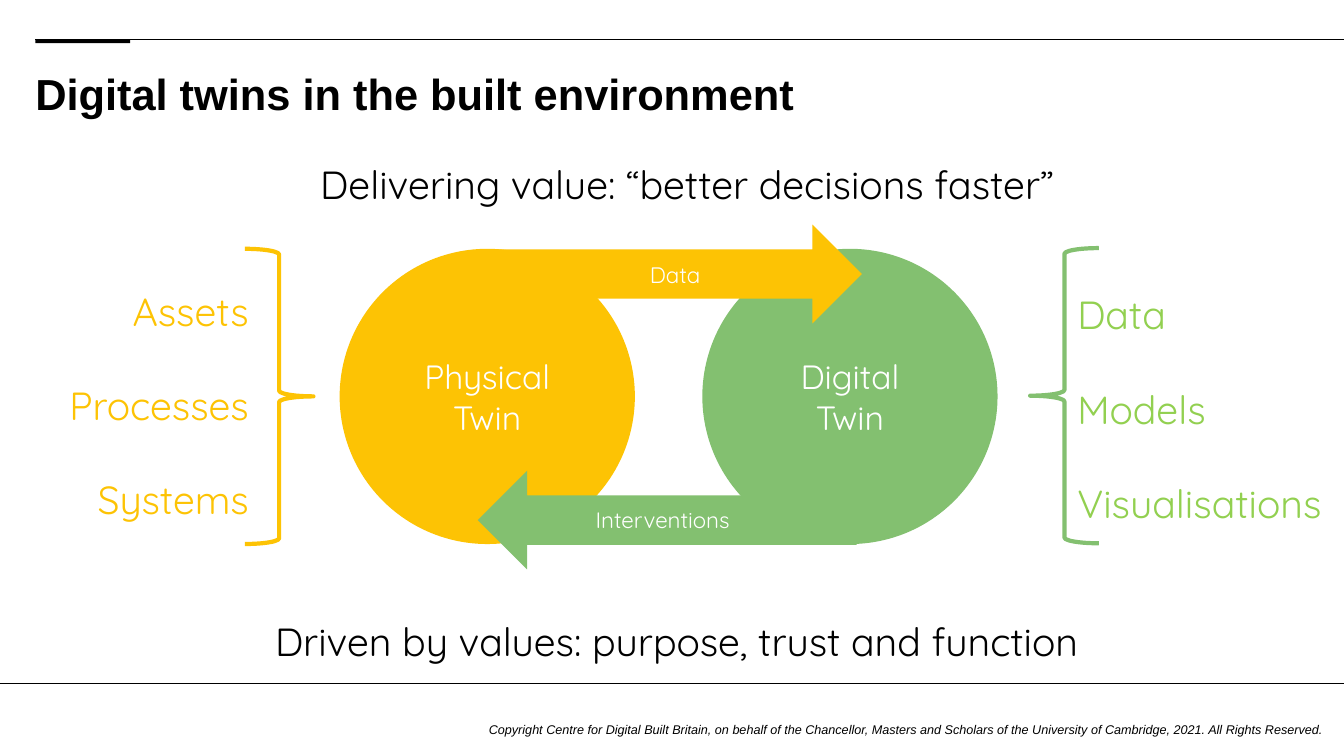
"""Build the slide on digital twins in the built environment."""
from dataclasses import dataclass

from lxml import etree
from pptx import Presentation
from pptx.dml.color import RGBColor
from pptx.enum.shapes import MSO_CONNECTOR, MSO_SHAPE
from pptx.enum.text import MSO_ANCHOR, PP_ALIGN
from pptx.oxml.ns import qn
from pptx.slide import Slide
from pptx.text.text import TextFrame
from pptx.util import Cm, Pt

STRAIGHT = MSO_CONNECTOR.STRAIGHT
RECT, OVAL = MSO_SHAPE.RECTANGLE, MSO_SHAPE.OVAL
ARROW, BRACE = MSO_SHAPE.RIGHT_ARROW, MSO_SHAPE.RIGHT_BRACE
TOP, MIDDLE = MSO_ANCHOR.TOP, MSO_ANCHOR.MIDDLE
LEFT, CENTER, RIGHT = PP_ALIGN.LEFT, PP_ALIGN.CENTER, PP_ALIGN.RIGHT

Box = tuple[float, float, float, float]


@dataclass(frozen=True)
class Theme:
    """Colours, fonts and type sizes."""
    black: str = "000000"
    white: str = "FFFFFF"
    physical: str = "FDC304"
    digital: str = "83C070"
    outputs: str = "92D050"
    heading_font: str = "Arial"
    body_font: str = "Quicksand"
    title: float = 31
    body: float = 28
    twin: float = 24
    flow: float = 16
    footer: float = 9
    rule: float = 0.12
    brace: float = 3


T = Theme()
WIDTH, HEIGHT = 33.87, 19.05
MARGIN = 0.89
TWIN_TOP, TWIN_SIZE = 6.27, 7.44


@dataclass(frozen=True)
class Style:
    """Type settings shared by the paragraphs of a text."""
    size: float
    color: str
    font: str = T.body_font
    align: PP_ALIGN = CENTER
    spacing: float = 1.0
    anchor: MSO_ANCHOR = MIDDLE
    inset: bool = True
    bold: bool = False
    italic: bool = False


@dataclass(frozen=True)
class Rule:
    """A horizontal line."""
    left: float
    top: float


@dataclass(frozen=True)
class Figure:
    """A preset shape, filled or outlined, with optional lines of text."""
    kind: MSO_SHAPE
    box: Box
    color: str
    rotation: float = 0
    outlined: bool = False
    lines: tuple[str, ...] = ()


@dataclass(frozen=True)
class Label:
    """A text box."""
    box: Box
    style: Style
    lines: tuple[str, ...]


TWIN = Style(T.twin, T.white)
FLOW = Style(T.flow, T.white, anchor=TOP)
BANNER = Style(T.body, T.black, spacing=2)
TITLE = Style(T.title, T.black, T.heading_font, LEFT, 0.9, TOP, inset=False, bold=True)
FOOTER = Style(T.footer, T.black, T.heading_font, LEFT, 0.9, TOP, inset=False, italic=True)
INPUTS = Style(T.body, T.physical, align=RIGHT, spacing=2)
OUTPUTS = Style(T.body, T.outputs, align=LEFT, spacing=2)

RULES = (Rule(MARGIN, 0.99), Rule(0, 17.22))

FIGURES = (
    Figure(RECT, (MARGIN, 0.99, 2.39, 0.1), T.black),
    Figure(OVAL, (8.56, TWIN_TOP, TWIN_SIZE, TWIN_SIZE), T.physical, lines=("Physical", "Twin")),
    Figure(OVAL, (17.7, TWIN_TOP, TWIN_SIZE, TWIN_SIZE), T.digital, lines=("Digital", "Twin")),
    Figure(ARROW, (12.17, 5.66, 9.55, 2.49), T.physical),
    Figure(ARROW, (12.04, 11.86, 9.55, 2.49), T.digital, rotation=180),
    Figure(BRACE, (6.17, TWIN_TOP, 1.73, TWIN_SIZE), T.physical, outlined=True),
    Figure(BRACE, (25.96, 6.25, 1.73, TWIN_SIZE), T.digital, rotation=180, outlined=True),
)

LABELS = (
    Label((MARGIN, 1.85, 32.05, 2.77), TITLE, ("Digital twins in the built environment",)),
    Label((6.83, 2.92, 20.96, 2.26), BANNER, ("Delivering value: “better decisions faster”",)),
    Label((15.82, 6.45, 2.39, 0.94), FLOW, ("Data",)),
    Label((14.2, 12.62, 5, 0.94), FLOW, ("Interventions",)),
    Label((1.19, 6.07, 5.33, 7.06), INPUTS, ("Assets", "Processes", "Systems")),
    Label((26.9, 6.17, 6.78, 7.06), OUTPUTS, ("Data", "Models", "Visualisations")),
    Label((5.72, 14.43, 22.66, 2.26), BANNER, ("Driven by values: purpose, trust and function",)),
    Label((12.32, 18.24, 21.54, 0.7), FOOTER, (
        "Copyright Centre for Digital Built Britain, on behalf of the Chancellor, Masters and "
        "Scholars of the University of Cambridge, 2021. All Rights Reserved.",)),
)


def write(tf: TextFrame, lines: tuple[str, ...], style: Style) -> None:
    """Fill a text frame with one paragraph per line."""
    tf.word_wrap = True
    tf.vertical_anchor = style.anchor
    if not style.inset:
        tf.margin_left = tf.margin_top = tf.margin_right = tf.margin_bottom = Cm(0)
    for i, line in enumerate(lines):
        p = tf.add_paragraph() if i else tf.paragraphs[0]
        p.alignment = style.align
        p.line_spacing = style.spacing
        r = p.add_run()
        r.text = line
        r.font.name = style.font
        r.font.size = Pt(style.size)
        r.font.bold = style.bold
        r.font.italic = style.italic
        r.font.color.rgb = RGBColor.from_string(style.color)


def draw_rule(s: Slide, rule: Rule) -> None:
    """Draw a thin line running to the right edge."""
    cx = s.shapes.add_connector(STRAIGHT, Cm(rule.left), Cm(rule.top), Cm(WIDTH), Cm(rule.top))
    cx.line.color.rgb = RGBColor.from_string(T.black)
    cx.line.width = Pt(T.rule)
    etree.SubElement(cx.line._get_or_add_ln().getparent(), qn("a:effectLst"))


def draw_figure(s: Slide, fig: Figure) -> None:
    """Draw a preset shape with its text."""
    sp = s.shapes.add_shape(fig.kind, *map(Cm, fig.box))
    sp.shadow.inherit = False
    sp.rotation = fig.rotation
    color = RGBColor.from_string(fig.color)
    if fig.outlined:
        sp.fill.background()
        sp.line.color.rgb = color
        sp.line.width = Pt(T.brace)
    else:
        sp.fill.solid()
        sp.fill.fore_color.rgb = color
        sp.line.fill.background()
    if fig.lines:
        write(sp.text_frame, fig.lines, TWIN)


def draw_label(s: Slide, label: Label) -> None:
    """Draw a text box."""
    sp = s.shapes.add_textbox(*map(Cm, label.box))
    write(sp.text_frame, label.lines, label.style)


def main() -> None:
    """Build and save the presentation."""
    prs = Presentation()
    prs.slide_width, prs.slide_height = Cm(WIDTH), Cm(HEIGHT)
    s = prs.slides.add_slide(prs.slide_layouts[6])
    for rule in RULES:
        draw_rule(s, rule)
    for fig in FIGURES:
        draw_figure(s, fig)
    for label in LABELS:
        draw_label(s, label)
    prs.save("out.pptx")


if __name__ == "__main__":
    main()
